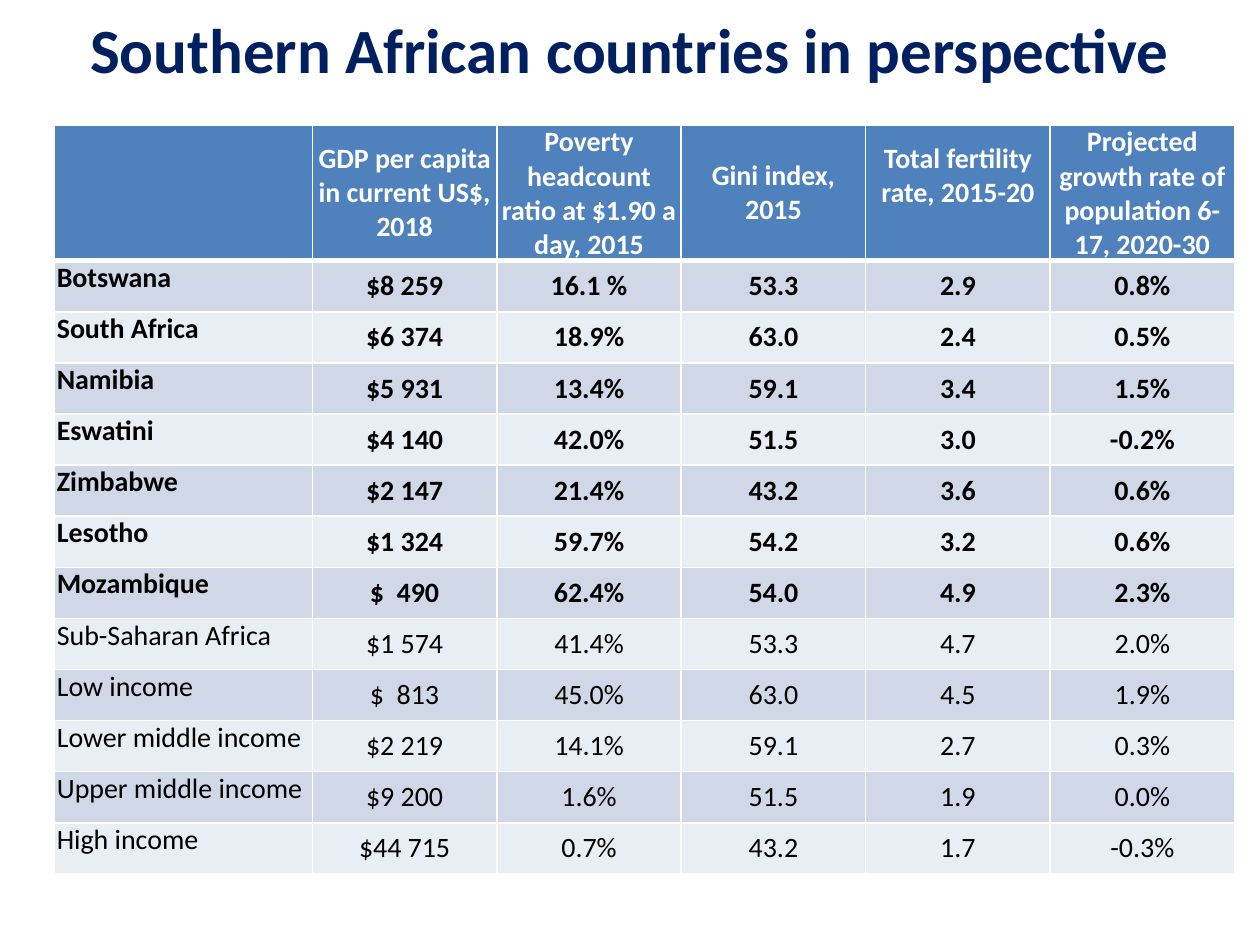
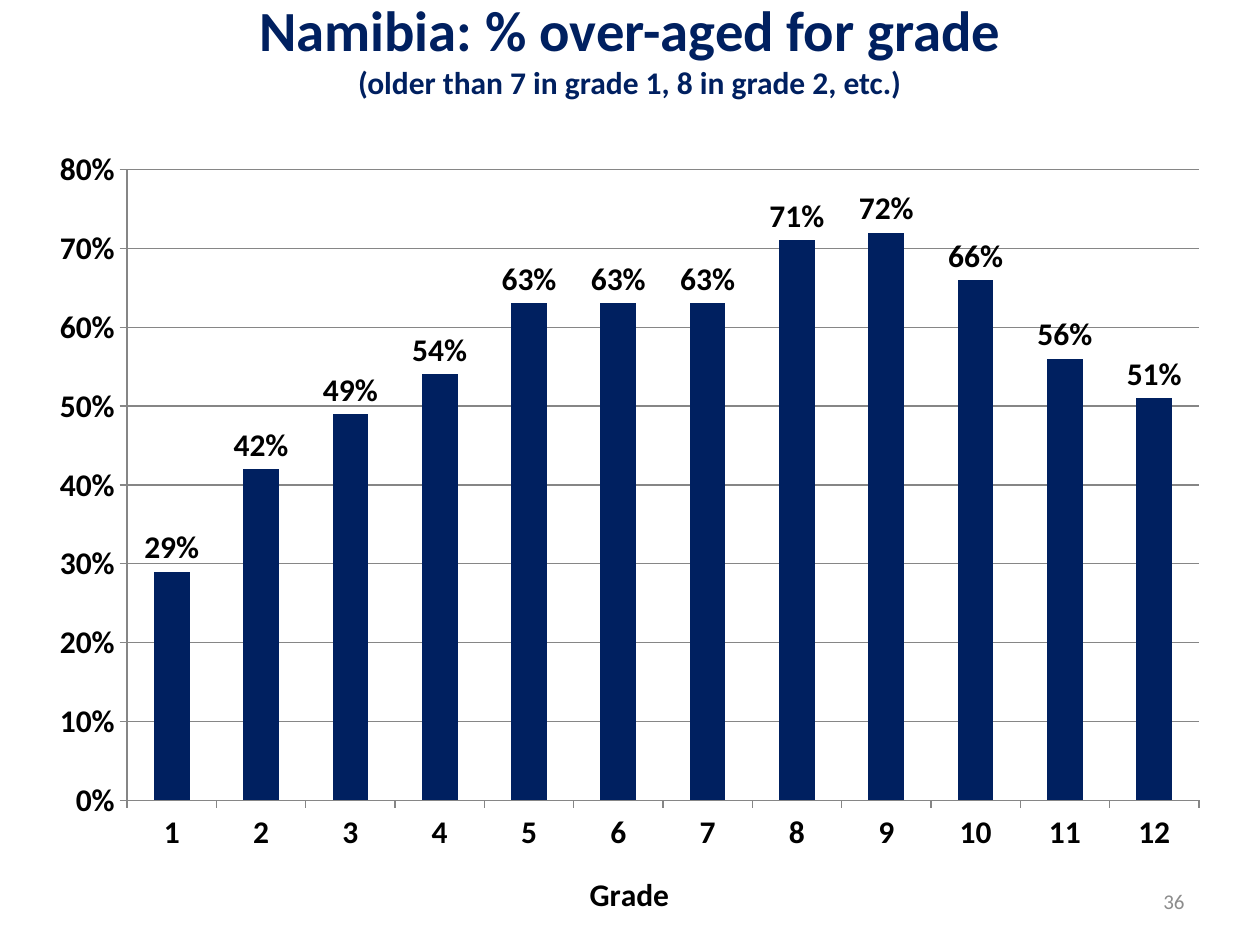
import pptx
import pptx.chart.data
import pptx.dml.color
import pptx.enum.chart
import pptx.enum.text
import pptx.oxml
import pptx.oxml.ns
import pptx.util

Pt = pptx.util.Pt
Align = pptx.enum.text.PP_ALIGN
Anchor = pptx.enum.text.MSO_ANCHOR
qn = pptx.oxml.ns.qn

HEADS = [
    "",
    "GDP per capita in current US$, 2018",
    "Poverty headcount ratio at $1.90 a day, 2015",
    "Gini index, 2015",
    "Total fertility rate, 2015-20",
    "Projected growth rate of population 6-17, 2020-30",
]
LANDS = [
    ["Botswana", "$8 259", "16.1 %", "53.3", "2.9", "0.8%"],
    ["South Africa", "$6 374", "18.9%", "63.0", "2.4", "0.5%"],
    ["Namibia", "$5 931", "13.4%", "59.1", "3.4", "1.5%"],
    ["Eswatini", "$4 140", "42.0%", "51.5", "3.0", "-0.2%"],
    ["Zimbabwe", "$2 147", "21.4%", "43.2", "3.6", "0.6%"],
    ["Lesotho", "$1 324", "59.7%", "54.2", "3.2", "0.6%"],
    ["Mozambique", "$  490", "62.4%", "54.0", "4.9", "2.3%"],
]
GROUPS = [
    ["Sub-Saharan Africa", "$1 574", "41.4%", "53.3", "4.7", "2.0%"],
    ["Low income", "$  813", "45.0%", "63.0", "4.5", "1.9%"],
    ["Lower middle income", "$2 219", "14.1%", "59.1", "2.7", "0.3%"],
    ["Upper middle income", "$9 200", "1.6%", "51.5", "1.9", "0.0%"],
    ["High income", "$44 715", "0.7%", "43.2", "1.7", "-0.3%"],
]
SHARES = [0.29, 0.42, 0.49, 0.54, 0.63, 0.63, 0.63, 0.71, 0.72, 0.66, 0.56, 0.51]


class Deck:
    """Hold the shared style and the current slide, and draw each kind of element."""

    face = "Calibri"
    hues = {
        "navy": "002060",
        "head": "4F81BD",
        "odd": "D0D8E8",
        "even": "E9EDF4",
        "white": "FFFFFF",
        "black": "000000",
        "grey": "8C8C8C",
        "line": "868686",
    }

    def __init__(self):
        self.prs = pptx.Presentation()
        self.prs.slide_width, self.prs.slide_height = Pt(720), Pt(540)
        self.slide = None

    def page(self):
        self.slide = self.prs.slides.add_slide(self.prs.slide_layouts[6])

    def hue(self, name):
        return pptx.dml.color.RGBColor.from_string(self.hues[name])

    def font(self, font, size, hue, bold=False):
        font.name, font.bold = self.face, bold
        font.color.rgb = self.hue(hue)
        if size:
            font.size = Pt(size)

    def text(self, words, box, size, hue, bold=False, align=Align.CENTER):
        frame = self.slide.shapes.add_textbox(*map(Pt, box)).text_frame
        frame.word_wrap = True
        frame.vertical_anchor = Anchor.MIDDLE
        para = frame.paragraphs[0]
        para.text, para.alignment = words, align
        self.font(para.font, size, hue, bold)
        return para

    def title(self, words, size, sub=None):
        box = (0, 0, 720, 54.7)
        if not sub:
            self.text(words, box, size, "navy", True)
            return
        para = self.text("", box, None, "navy", True)
        top = para.add_run()
        top.text, top.font.size = words, Pt(size)
        para.add_line_break()
        low = para.add_run()
        low.text, low.font.size = sub, Pt(18)

    def edges(self, cell, top, low):
        props = cell._tc.get_or_add_tcPr()
        for i, (side, width) in enumerate(zip("LRTB", (1, 1, top, low))):
            line = pptx.oxml.parse_xml(
                f'<a:ln{side} {pptx.oxml.ns.nsdecls("a")} w="{Pt(width)}"><a:solidFill>'
                f'<a:srgbClr val="{self.hues["white"]}"/></a:solidFill></a:ln{side}>'
            )
            props.insert(i, line)

    def cell(self, cell, words, fill, hue, bold, align, anchor):
        cell.fill.solid()
        cell.fill.fore_color.rgb = self.hue(fill)
        cell.margin_left = cell.margin_right = Pt(1.5)
        cell.margin_top = cell.margin_bottom = 0
        cell.vertical_anchor = anchor
        para = cell.text_frame.paragraphs[0]
        para.text, para.alignment = words, align
        self.font(para.font, 16, hue, bold)

    def table(self, rows, bolds, box, first, high):
        shape = self.slide.shapes.add_table(len(rows), len(rows[0]), *map(Pt, box))
        table = shape.table
        table.first_row = table.horz_banding = False
        rest = (box[2] - first) / (len(rows[0]) - 1)
        for c, col in enumerate(table.columns):
            col.width = Pt(rest if c else first)
        low = (box[3] - high) / (len(rows) - 1)
        for r, row in enumerate(rows):
            table.rows[r].height = Pt(low if r else high)
            fill = ("odd" if r % 2 else "even") if r else "head"
            for c, words in enumerate(row):
                cell = table.cell(r, c)
                label = r > 0 and c == 0
                self.cell(
                    cell, words, fill, "black" if r else "white", r <= bolds,
                    Align.LEFT if label else Align.CENTER,
                    Anchor.TOP if label else Anchor.MIDDLE,
                )
                self.edges(cell, 3 if r == 1 else 1, 1 if r else 3)
        return table

    def layout(self, chart, spots):
        plot = chart._chartSpace.chart.plotArea
        for old in plot.findall(qn("c:layout")):
            plot.remove(old)
        sizes = "".join(f'<c:{k} val="{v}"/>' for k, v in zip("xywh", spots))
        plot.insert(0, pptx.oxml.parse_xml(
            f'<c:layout {pptx.oxml.ns.nsdecls("c")}><c:manualLayout>'
            '<c:layoutTarget val="inner"/><c:xMode val="edge"/><c:yMode val="edge"/>'
            f"{sizes}</c:manualLayout></c:layout>"
        ))

    def chart(self, cats, vals, box, label):
        data = pptx.chart.data.CategoryChartData(number_format="0%")
        data.categories = cats
        data.add_series("Series 1", vals)
        kind = pptx.enum.chart.XL_CHART_TYPE.COLUMN_CLUSTERED
        chart = self.slide.shapes.add_chart(kind, *map(Pt, box), data).chart
        chart.has_legend = chart.has_title = False
        self.font(chart.font, 18, "black", True)
        self.layout(chart, (0.09, 0.05, 0.88, 0.79))

        plot = chart.plots[0]
        plot.gap_width, plot.vary_by_categories = 150, False
        bars = plot.series[0].format.fill
        bars.solid()
        bars.fore_color.rgb = self.hue("navy")
        plot.has_data_labels = True
        tags = plot.data_labels
        tags.show_value = True
        tags.number_format, tags.number_format_is_linked = "0%", False
        tags.position = pptx.enum.chart.XL_LABEL_POSITION.OUTSIDE_END
        self.font(tags.font, 18, "black", True)

        base, side = chart.category_axis, chart.value_axis
        side.minimum_scale, side.maximum_scale, side.major_unit = 0, 0.8, 0.1
        side.has_major_gridlines = True
        side.tick_labels.number_format = "0%"
        side.tick_labels.number_format_is_linked = False
        for part in (base, side, side.major_gridlines):
            part.format.line.color.rgb = self.hue("line")
            part.format.line.width = Pt(0.75)
        for axis in (base, side):
            axis.major_tick_mark = pptx.enum.chart.XL_TICK_MARK.OUTSIDE
        para = base.axis_title.text_frame.paragraphs[0]
        para.text = label
        self.font(para.font, 18, "black", True)


def main():
    deck = Deck()

    deck.page()
    deck.title("Southern African countries in perspective", 36)
    rows = [HEADS] + LANDS + GROUPS
    table = deck.table(rows, len(LANDS), (31, 71.5, 674.5, 428), 147.5, 77.5)
    table.cell(0, 4).margin_bottom = Pt(19.5)

    deck.page()
    deck.title(
        "Namibia: % over-aged for grade", 32.4,
        "(older than 7 in grade 1, 8 in grade 2, etc.)",
    )
    deck.text("36", (516, 500.5, 168, 28.8), 12, "grey", align=Align.RIGHT)
    grades = [str(n) for n in range(1, len(SHARES) + 1)]
    deck.chart(grades, SHARES, (10, 74, 696, 456.5), "Grade")

    deck.prs.save("out.pptx")


if __name__ == "__main__":
    main()
